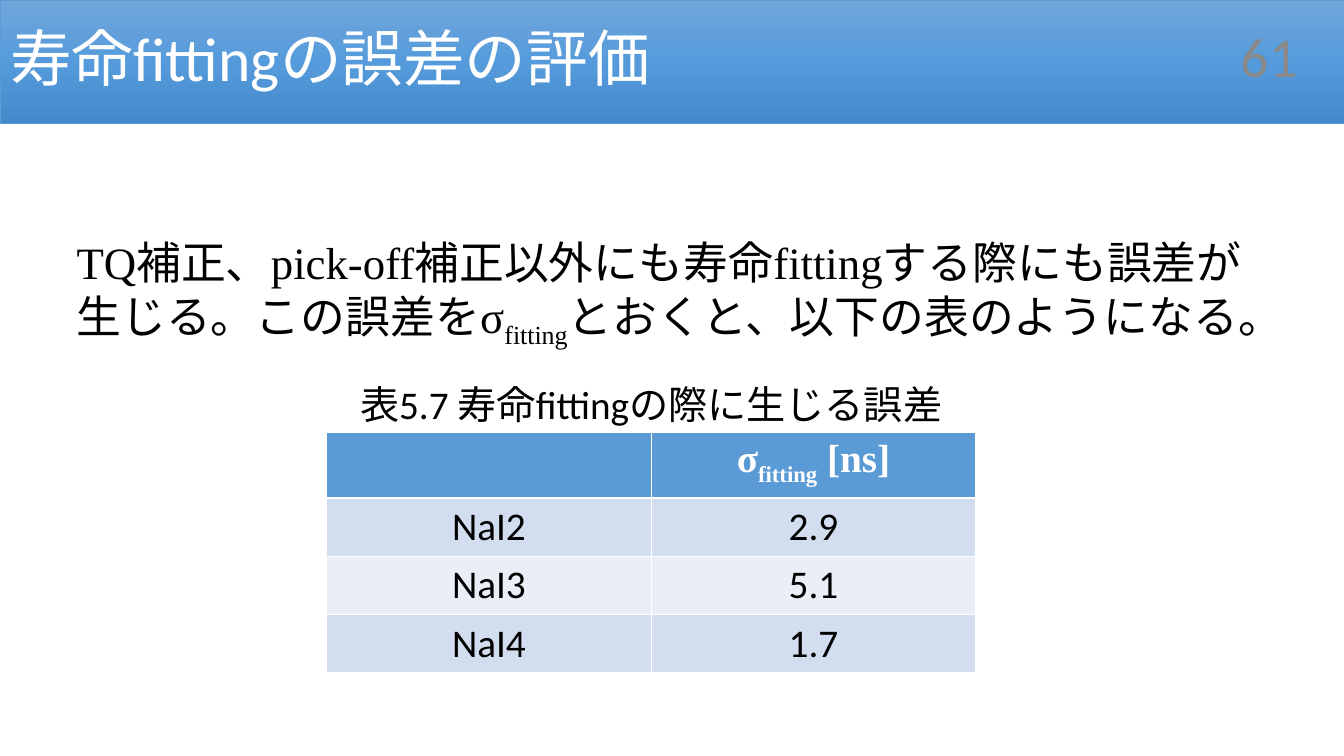
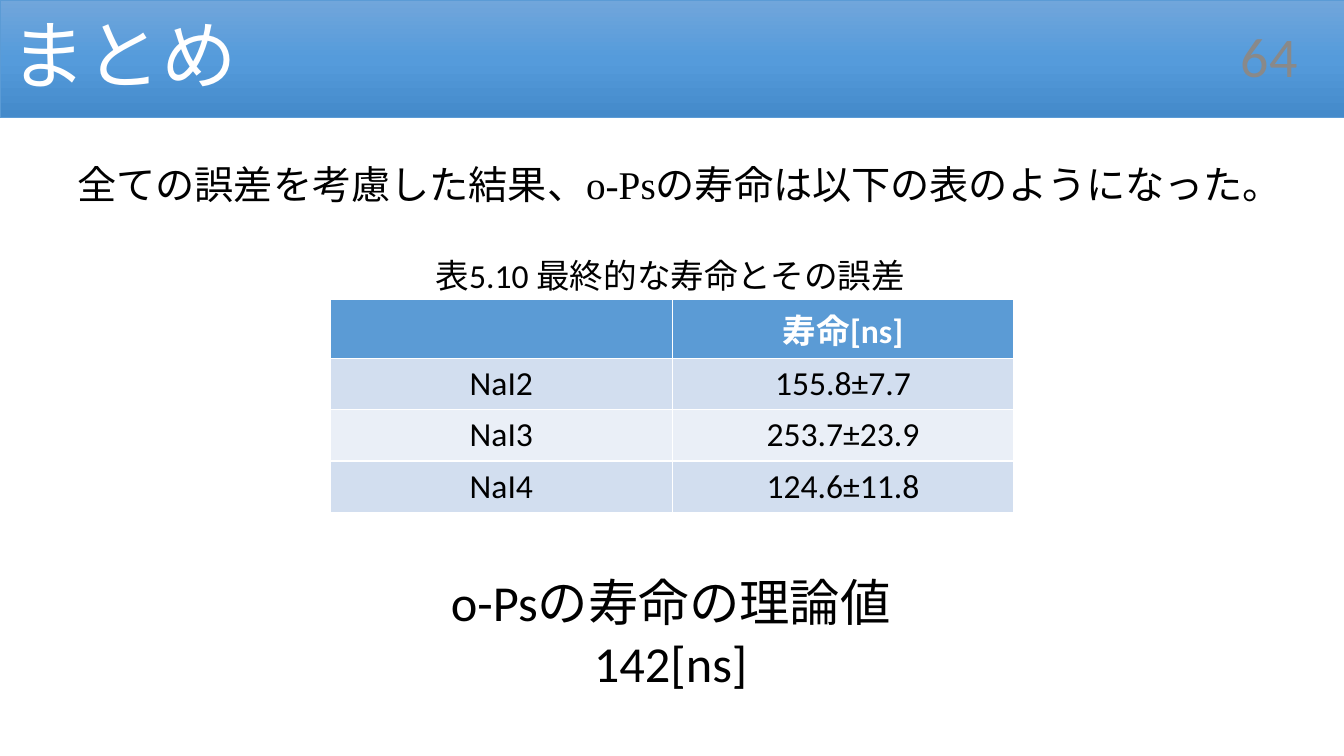
from copy import deepcopy
from dataclasses import dataclass

from pptx import Presentation
from pptx.dml.color import RGBColor
from pptx.enum.lang import MSO_LANGUAGE_ID
from pptx.enum.text import MSO_ANCHOR, MSO_AUTO_SIZE, PP_ALIGN
from pptx.oxml.ns import qn
from pptx.util import Cm, Pt

LEFT, MID, RIGHT = PP_ALIGN.LEFT, PP_ALIGN.CENTER, PP_ALIGN.RIGHT
TOP, CENTRE = MSO_ANCHOR.TOP, MSO_ANCHOR.MIDDLE
FIXED = MSO_AUTO_SIZE.NONE
JAPANESE = MSO_LANGUAGE_ID.JAPANESE
TITLE_ONLY = 5


@dataclass(frozen=True)
class Theme:
    sans: str = "Calibri"
    serif: str = "Times New Roman"
    white: str = "FFFFFF"
    black: str = "000000"
    grey: str = "898989"
    head: str = "5B9BD5"
    bands: tuple = ("D2DEEF", "EAEFF7")
    shade: tuple = ((0, "71A6DB"), (0.5, "559BDB"), (1, "448ACA"))
    page: int = 40
    note: int = 36


THEME = Theme()
WIDTH, HEIGHT = 33.87, 19.05
PAGE_BOX = (28.95, 0.5, 4, 1.8)

# A line of text is a list of parts; every second part is a subscript.
# Boxes are left, top, width, height in centimetres.
SLIDES = [
    {
        "title": "寿命fittingの誤差の評価", "size": 44, "band": 3.12, "page": "61",
        "body": ["TQ補正、pick-off補正以外にも寿命fittingする際にも誤差が生じる。"
                 "この誤差をσ", "fitting", "とおくと、以下の表のようになる。"],
        "body_box": (1.68, 5.79, 30.23, 3), "body_size": 32, "body_style": {},
        "caption": "表5.7 寿命fittingの際に生じる誤差",
        "caption_box": (8.23, 9.47, 16.36, 1.45),
        "head": ["σ", "fitting", " [ns]"], "head_font": THEME.serif,
        "rows": [("NaI2", "2.9"), ("NaI3", "5.1"), ("NaI4", "1.7")],
        "table_at": (8.23, 10.9), "heights": (1.65, 1.44), "table_size": 28,
        "notes": [],
    },
    {
        "title": "まとめ", "size": 54, "band": 2.97, "page": "64",
        "body": ["全ての誤差を考慮した結果、o-Psの寿命は以下の表のようになった。"],
        "body_box": (1.7, 4.04, 30.48, 1.42), "body_size": 28,
        "body_style": {"line": 0.9, "before": 10},
        "caption": "表5.10 最終的な寿命とその誤差",
        "caption_box": (8.28, 6.3, 17.22, 1.27),
        "head": ["寿命[ns]"], "head_font": THEME.sans,
        "rows": [("NaI2", "155.8±7.7"), ("NaI3", "253.7±23.9"),
                 ("NaI4", "124.6±11.8")],
        "table_at": (8.33, 7.54), "heights": (1.43, 1.29), "table_size": 24,
        "notes": ["o-Psの寿命の理論値", "142[ns]"],
        "notes_box": (6.2, 14.27, 21.41, 3.33),
    },
]


def rgb(code):
    return RGBColor.from_string(code)


def write(para, parts, size, font=THEME.sans, color=THEME.black,
          align=LEFT, bold=False, line=None, before=None):
    """Fill a paragraph with parts, lowering every second one."""
    style = para.font
    style.name, style.size, style.bold = font, Pt(size), bold
    style.color.rgb = rgb(color)
    para.alignment = align
    if line:
        para.line_spacing = line
    if before:
        para.space_before = Pt(before)
    for i, part in enumerate(parts):
        run = para.add_run()
        run.text = part
        run.font.language_id = JAPANESE
        if i % 2:
            run._r.get_or_add_rPr().set("baseline", "-25000")


def add_text(slide, box, lines, size, anchor=TOP, **style):
    frame = slide.shapes.add_textbox(*map(Cm, box)).text_frame
    frame.word_wrap = True
    frame.auto_size = FIXED
    frame.vertical_anchor = anchor
    for i, parts in enumerate(lines):
        para = frame.add_paragraph() if i else frame.paragraphs[0]
        write(para, parts, size, **style)


def set_title(slide, text, size, height):
    """Turn the title placeholder into the shaded band."""
    band = slide.shapes.title
    band.left, band.top, band.width, band.height = map(Cm, (0, 0, WIDTH, height))
    fill = band.fill
    fill.gradient()
    fill.gradient_angle = 270
    stops = band._element.spPr.find(".//" + qn("a:gsLst"))
    stops.append(deepcopy(stops[0]))
    for stop, (place, color) in zip(fill.gradient_stops, THEME.shade):
        stop.position = place
        stop.color.rgb = rgb(color)
    band.line.color.rgb = rgb(THEME.head)
    band.line.width = Pt(0.5)
    band.shadow.inherit = False
    frame = band.text_frame
    frame.auto_size = FIXED
    frame.vertical_anchor = CENTRE
    write(frame.paragraphs[0], [text], size, color=THEME.white, line=0.9)


def add_table(slide, data):
    rows = [([], data["head"])] + [([a], [b]) for a, b in data["rows"]]
    top, low = data["heights"]
    tall = [top] + [low] * len(data["rows"])
    wide = data["caption_box"][2]
    box = (*data["table_at"], wide, sum(tall))
    table = slide.shapes.add_table(len(rows), 2, *map(Cm, box)).table
    for r, row in enumerate(rows):
        table.rows[r].height = Cm(tall[r])
        for c, parts in enumerate(row):
            cell = table.cell(r, c)
            cell.margin_left = cell.margin_right = Cm(0.33)
            cell.margin_top = cell.margin_bottom = Cm(0.13)
            cell.fill.solid()
            cell.fill.fore_color.rgb = rgb(THEME.bands[(r - 1) % 2] if r
                                           else THEME.head)
            write(cell.text_frame.paragraphs[0], parts, data["table_size"],
                  font=THEME.sans if r else data["head_font"],
                  color=THEME.black if r else THEME.white,
                  align=MID, bold=not r)


def build(deck, data):
    slide = deck.slides.add_slide(deck.slide_layouts[TITLE_ONLY])
    set_title(slide, data["title"], data["size"], data["band"])
    add_text(slide, PAGE_BOX, [[data["page"]]], THEME.page, CENTRE,
             color=THEME.grey, align=RIGHT)
    add_text(slide, data["body_box"], [data["body"]], data["body_size"],
             font=THEME.serif, **data["body_style"])
    add_table(slide, data)
    add_text(slide, data["caption_box"], [[data["caption"]]],
             data["table_size"], align=MID)
    if data["notes"]:
        add_text(slide, data["notes_box"], [[note] for note in data["notes"]],
                 THEME.note, align=MID)


def main():
    deck = Presentation()
    deck.slide_width, deck.slide_height = Cm(WIDTH), Cm(HEIGHT)
    for data in SLIDES:
        build(deck, data)
    deck.save("out.pptx")


if __name__ == "__main__":
    main()
